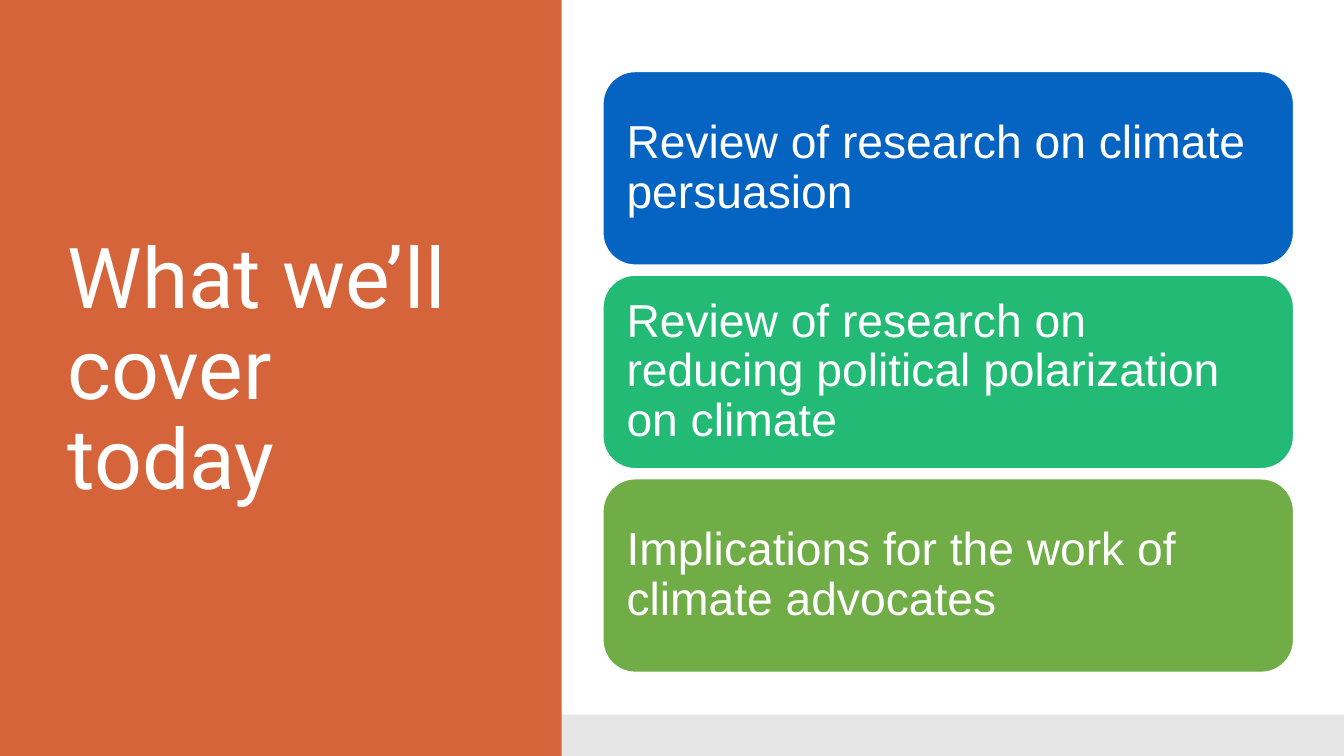
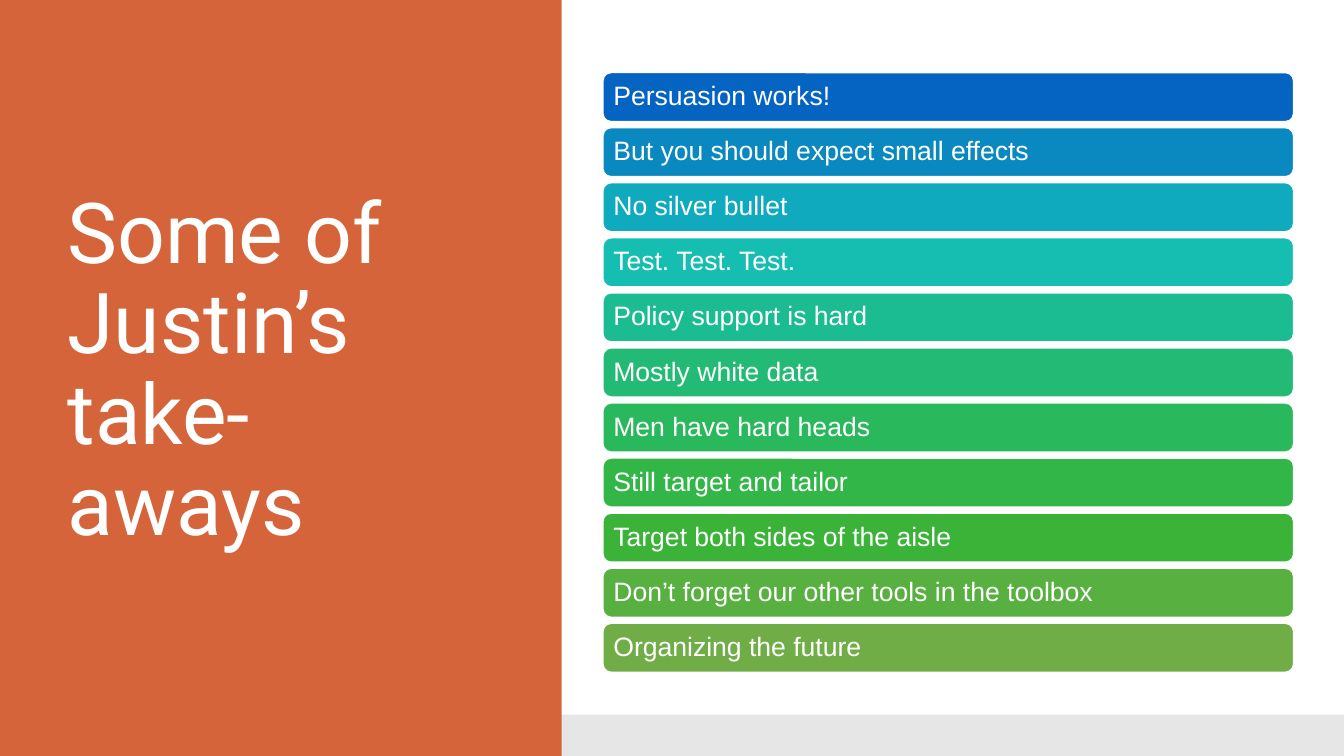
import pptx
import pptx.dml.color
import pptx.enum.shapes
import pptx.enum.text
import pptx.util

PIXEL = 9144
SLIDE_WIDTH, SLIDE_HEIGHT = 1333, 750
COLORS = {
    "white": "FFFFFF",
    "band": "E7E6E6",
    "panel": "D5643B",
    "blue": "0563C1",
    "ocean": "0A88C0",
    "cyan": "10AABF",
    "turquoise": "16BEB2",
    "teal": "1CBC92",
    "jade": "23BA76",
    "emerald": "2AB85D",
    "green": "31B647",
    "grass": "3AB338",
    "leaf": "57B03F",
    "olive": "70AD47",
}
BAND = (0, 709, SLIDE_WIDTH, 41)
PANEL = (0, 0, 557, SLIDE_HEIGHT)
TITLE = (57, 68, 416, 602)
CARDS = {"left": 598, "width": 685, "bottom": 667}
TITLE_FONT = {"name": "Roboto", "size": pptx.util.Pt(60), "bold": False}
SLIDES = [
    {
        "title": "What we’ll cover today",
        "top": 71, "gap": 10, "inset": 14, "size": 33,
        "cards": [
            ("Review of research on climate persuasion", "blue"),
            ("Review of research on reducing political polarization on climate", "jade"),
            ("Implications for the work of climate advocates", "olive"),
        ],
    },
    {
        "title": "Some of Justin’s take-aways",
        "top": 72, "gap": 6, "inset": 8, "size": 19,
        "cards": [
            ("Persuasion works!", "blue"),
            ("But you should expect small effects", "ocean"),
            ("No silver bullet", "cyan"),
            ("Test. Test. Test.", "turquoise"),
            ("Policy support is hard", "teal"),
            ("Mostly white data", "jade"),
            ("Men have hard heads", "emerald"),
            ("Still target and tailor", "green"),
            ("Target both sides of the aisle", "grass"),
            ("Don’t forget our other tools in the toolbox", "leaf"),
            ("Organizing the future", "olive"),
        ],
    },
]


def px(value):
    return pptx.util.Emu(round(value * PIXEL))


def color(name):
    return pptx.dml.color.RGBColor.from_string(COLORS[name])


def apply(target, values):
    for name, value in values.items():
        setattr(target, name, value)


def add_box(slide, kind, box, fill, line=None):
    shape = slide.shapes.add_shape(kind, *map(px, box))
    shape.shadow.inherit = False
    shape.fill.solid()
    shape.fill.fore_color.rgb = color(fill)
    if line:
        shape.line.color.rgb = color(line)
        shape.line.width = pptx.util.Pt(1)
    else:
        shape.line.fill.background()
    return shape


def write(shape, text, font, insets):
    frame = shape.text_frame
    frame.text = text
    sides = ("margin_left", "margin_top", "margin_right", "margin_bottom")
    apply(frame, dict(zip(sides, map(px, insets))))
    apply(frame, {
        "word_wrap": True,
        "auto_size": pptx.enum.text.MSO_AUTO_SIZE.NONE,
        "vertical_anchor": pptx.enum.text.MSO_ANCHOR.MIDDLE,
    })
    paragraph = frame.paragraphs[0]
    apply(paragraph, {"alignment": pptx.enum.text.PP_ALIGN.LEFT, "line_spacing": 0.9})
    run_font = paragraph.runs[0].font
    apply(run_font, font)
    run_font.color.rgb = color("white")


def add_master_band(presentation, slide):
    band = add_box(slide, pptx.enum.shapes.MSO_SHAPE.RECTANGLE, BAND, "band")
    band.element.nvSpPr.cNvPr.set("id", "20")
    presentation.slide_master.shapes.element.insert(2, band.element)


def add_title_panel(slide, text):
    panel = add_box(slide, pptx.enum.shapes.MSO_SHAPE.RECTANGLE, PANEL, "panel")
    slide.shapes.element.insert(2, panel.element)
    title = slide.shapes.title
    apply(title, dict(zip(("left", "top", "width", "height"), map(px, TITLE))))
    write(title, text, TITLE_FONT, (10, 5, 10, 5))


def add_cards(slide, content):
    top, gap, cards = content["top"], content["gap"], content["cards"]
    step = (CARDS["bottom"] - top + gap) / len(cards)
    font = {"name": "Arial", "size": pptx.util.Pt(content["size"])}
    for index, (text, fill) in enumerate(cards):
        box = (CARDS["left"], top + index * step, CARDS["width"], step - gap)
        card = add_box(slide, pptx.enum.shapes.MSO_SHAPE.ROUNDED_RECTANGLE, box, fill, "white")
        write(card, text, font, [content["inset"]] * 4)


def main():
    presentation = pptx.Presentation()
    presentation.slide_width = px(SLIDE_WIDTH)
    presentation.slide_height = px(SLIDE_HEIGHT)
    layout = presentation.slide_layouts.get_by_name("Title Only")
    slides = [presentation.slides.add_slide(layout) for _ in SLIDES]
    add_master_band(presentation, slides[0])
    for slide, content in zip(slides, SLIDES):
        add_title_panel(slide, content["title"])
        add_cards(slide, content)
    presentation.save("out.pptx")


if __name__ == "__main__":
    main()
